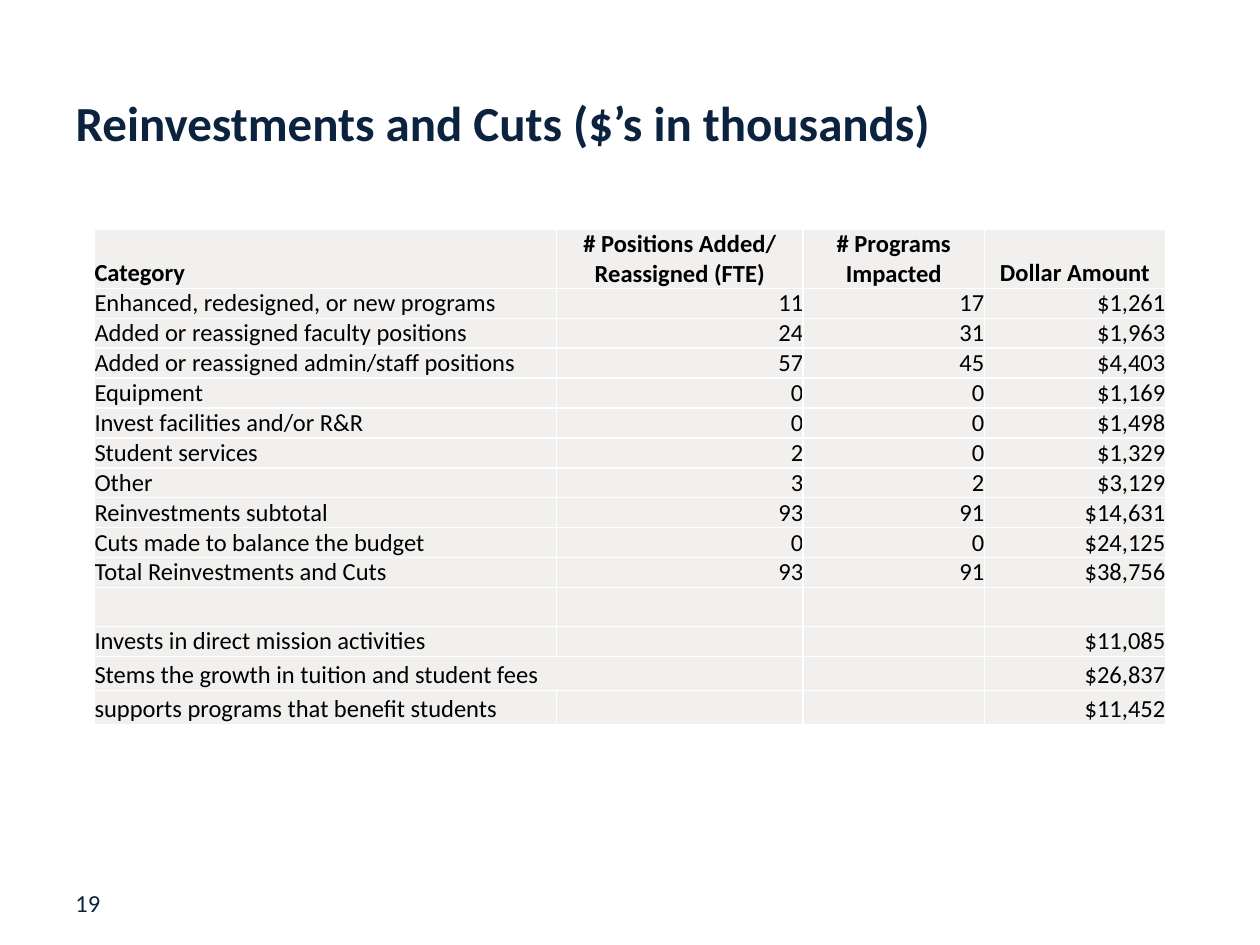
from lxml import etree
from pptx import Presentation
from pptx.dml.color import RGBColor
from pptx.enum.text import MSO_ANCHOR, MSO_AUTO_SIZE, PP_ALIGN
from pptx.oxml.ns import qn
from pptx.util import Pt

LEFT, CENTER, RIGHT = PP_ALIGN.LEFT, PP_ALIGN.CENTER, PP_ALIGN.RIGHT
BOTTOM = MSO_ANCHOR.BOTTOM
NO_AUTOFIT = MSO_AUTO_SIZE.NONE

NAVY = RGBColor(0x0C, 0x23, 0x40)
BLACK = RGBColor(0x00, 0x00, 0x00)
PALE_GRAY = RGBColor(0xF1, 0xF0, 0xEF)
WHITE = RGBColor(0xFF, 0xFF, 0xFF)

FONT = "Calibri"
TEXT_SIZE = 14
TITLE_LAYOUT = 5

COLUMN_WIDTHS = (264, 141, 103.5, 103.5)
HEADER_HEIGHT = 33.8
ROW_HEIGHT = 17.1
SPECIAL_HEIGHTS = {0: HEADER_HEIGHT, 11: 22.3, 13: 19.4, 14: 19.4}
MERGED_ROW = 13

BUDGET_ROWS = (
    ("Category", "# Positions Added/ Reassigned (FTE)", "# Programs Impacted", "Dollar Amount"),
    ("Enhanced, redesigned, or new programs", "11", "17", "$1,261"),
    ("Added or reassigned faculty positions", "24", "31", "$1,963"),
    ("Added or reassigned admin/staff positions", "57", "45", "$4,403"),
    ("Equipment", "0", "0", "$1,169"),
    ("Invest facilities and/or R&R", "0", "0", "$1,498"),
    ("Student services", "2", "0", "$1,329"),
    ("Other", "3", "2", "$3,129"),
    ("Reinvestments subtotal", "93", "91", "$14,631"),
    ("Cuts made to balance the budget", "0", "0", "$24,125"),
    ("Total Reinvestments and Cuts", "93", "91", "$38,756"),
    ("", "", "", ""),
    ("Invests in direct mission activities", "", "", "$11,085"),
    ("Stems the growth in tuition and student fees", "", "", "$26,837"),
    ("supports programs that benefit students", "", "", "$11,452"),
)


def style_paragraph(paragraph, size, color, bold=False, alignment=LEFT):
    """Set the font and alignment of one paragraph."""
    paragraph.alignment = alignment
    font = paragraph.font
    font.name, font.size, font.bold = FONT, Pt(size), bold
    font.color.rgb = color


def add_title(slide, box, text):
    """Fill the title placeholder and move it to the box."""
    title = slide.shapes.title
    title.left, title.top, title.width, title.height = map(Pt, box)
    frame = title.text_frame
    frame.text = text
    frame.auto_size = NO_AUTOFIT
    frame.vertical_anchor = BOTTOM
    style_paragraph(frame.paragraphs[0], 28, NAVY, bold=True)


def add_page_number(slide, box, number):
    """Write the page number in the box."""
    frame = slide.shapes.add_textbox(*map(Pt, box)).text_frame
    frame.word_wrap = True
    frame.text = number
    style_paragraph(frame.paragraphs[0], TEXT_SIZE, NAVY)


def add_borders(cell):
    """Draw a thin white line on each side of a cell."""
    properties = cell._tc.get_or_add_tcPr()
    for side in ("a:lnL", "a:lnR", "a:lnT", "a:lnB"):
        line = etree.SubElement(properties, qn(side), w=str(Pt(1)))
        fill = etree.SubElement(line, qn("a:solidFill"))
        etree.SubElement(fill, qn("a:srgbClr"), val=str(WHITE))


def fill_cell(cell, text, bold, alignment):
    """Write and format one table cell."""
    add_borders(cell)
    cell.fill.solid()
    cell.fill.fore_color.rgb = PALE_GRAY
    cell.margin_left = cell.margin_right = cell.margin_top = cell.margin_bottom = 0
    cell.vertical_anchor = BOTTOM
    cell.text = text
    paragraph = cell.text_frame.paragraphs[0]
    style_paragraph(paragraph, TEXT_SIZE, BLACK, bold, alignment)
    if not text:
        etree.SubElement(paragraph._p, qn("a:endParaRPr"), sz=str(TEXT_SIZE * 100))


def add_budget_table(slide, left, top):
    """Build the table of reinvestments and cuts from its top left corner."""
    heights = [SPECIAL_HEIGHTS.get(row, ROW_HEIGHT) for row in range(len(BUDGET_ROWS))]
    table = slide.shapes.add_table(
        len(BUDGET_ROWS), len(COLUMN_WIDTHS),
        Pt(left), Pt(top), Pt(sum(COLUMN_WIDTHS)), Pt(sum(heights)),
    ).table
    table.first_row = table.horz_banding = False
    for column, width in zip(table.columns, COLUMN_WIDTHS):
        column.width = Pt(width)
    for row_index, (height, values) in enumerate(zip(heights, BUDGET_ROWS)):
        table.rows[row_index].height = Pt(height)
        is_header = row_index == 0
        for column_index, value in enumerate(values):
            number_alignment = CENTER if is_header else RIGHT
            alignment = number_alignment if column_index else LEFT
            fill_cell(table.cell(row_index, column_index), value, is_header, alignment)
    table.cell(MERGED_ROW, 0).merge(table.cell(MERGED_ROW, 1))


def main():
    """Build and save the slide."""
    presentation = Presentation()
    presentation.slide_width, presentation.slide_height = Pt(720), Pt(540)
    slide = presentation.slides.add_slide(presentation.slide_layouts[TITLE_LAYOUT])
    add_page_number(slide, (36, 504, 156, 24.5), "19")
    add_title(slide, (36, 42, 552, 48), "Reinvestments and Cuts ($’s in thousands)")
    add_budget_table(slide, 54, 131)
    presentation.save("out.pptx")


if __name__ == "__main__":
    main()
